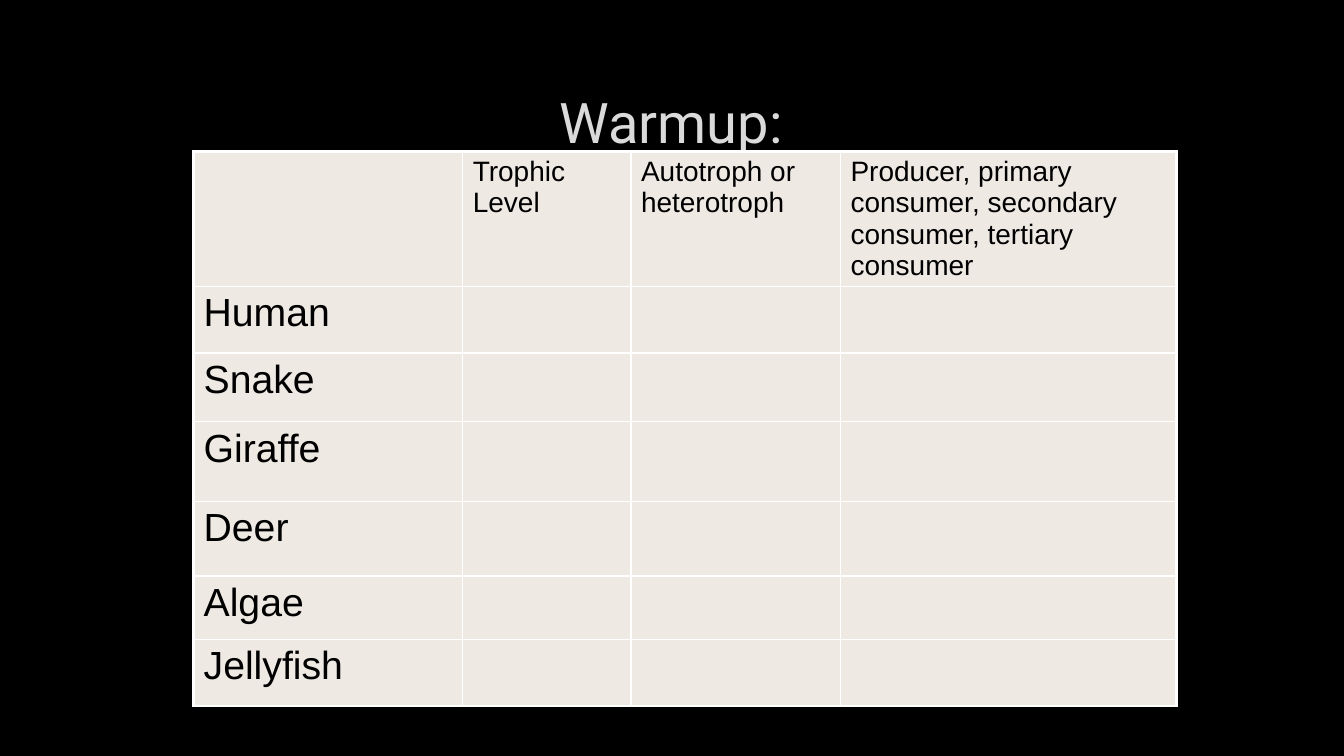
from dataclasses import dataclass

from lxml import etree
from pptx import Presentation
from pptx import util as u
from pptx.dml.color import RGBColor
from pptx.enum import text
from pptx.oxml.ns import qn


@dataclass(frozen=True)
class Theme:
    """Hold the colours, fonts and type sizes of the slide."""
    back: str = "000000"
    title: str = "DADADA"
    ink: str = "000000"
    cell: str = "EFE9E4"
    rule: str = "FFFFFF"
    head_font: str = "Roboto"
    body_font: str = "Arial"
    title_size: int = 40
    head_size: int = 20
    row_size: int = 28
    thin: float = 1
    thick: float = 2.25


THEME = Theme()
HEADS = ["", "Trophic Level", "Autotroph or heterotroph",
         "Producer, primary consumer, secondary consumer, tertiary consumer"]
NAMES = ["Human", "Snake", "Giraffe", "Deer", "Algae", "Jellyfish"]
WIDTHS = [6.78, 4.24, 5.28, 8.46]
HEIGHTS = [3.38, 1.68, 1.73, 2.01, 1.88, 1.6, 1.68]


def write(frame, words, font, size, color, align=text.PP_ALIGN.LEFT):
    """Write one formatted paragraph into a text frame."""
    para = frame.paragraphs[0]
    para.alignment = align
    run = para.add_run()
    run.text = words
    run.font.name = font
    run.font.size = u.Pt(size)
    run.font.bold = False
    run.font.color.rgb = RGBColor.from_string(color)


def rule_cell(cell, sides):
    """Draw the cell borders; sides maps each side to a width in points."""
    props = cell._tc.get_or_add_tcPr()
    for side, width in sides.items():
        line = etree.SubElement(props, qn(f"a:ln{side}"), w=str(u.Pt(width)))
        fill = etree.SubElement(line, qn("a:solidFill"))
        etree.SubElement(fill, qn("a:srgbClr"), val=THEME.rule)


def add_title(slide, words, box):
    """Place the title placeholder in the box."""
    title = slide.shapes.title
    title.left, title.top, title.width, title.height = map(u.Cm, box)
    frame = title.text_frame
    frame.word_wrap = True
    frame.auto_size = text.MSO_AUTO_SIZE.NONE
    frame.vertical_anchor = text.MSO_ANCHOR.MIDDLE
    write(frame, words, font=THEME.head_font, size=THEME.title_size,
          color=THEME.title, align=text.PP_ALIGN.CENTER)


def add_grid(slide, left, top):
    """Place the organism table with its corner at left, top."""
    rows = [HEADS] + [[name, "", "", ""] for name in NAMES]
    grid = slide.shapes.add_table(
        len(rows), len(HEADS), u.Cm(left), u.Cm(top),
        u.Cm(sum(WIDTHS)), u.Cm(sum(HEIGHTS))).table
    grid.first_row = grid.horz_banding = False
    for col, width in zip(grid.columns, WIDTHS):
        col.width = u.Cm(width)
    for row, height in zip(grid.rows, HEIGHTS):
        row.height = u.Cm(height)
    for r, row in enumerate(rows):
        for c, words in enumerate(row):
            cell = grid.cell(r, c)
            edges = {"L": c == 0, "R": c == len(row) - 1,
                     "T": r == 0, "B": r == len(rows) - 1}
            rule_cell(cell, {side: THEME.thick if edge else THEME.thin
                             for side, edge in edges.items()})
            cell.fill.solid()
            cell.fill.fore_color.rgb = RGBColor.from_string(THEME.cell)
            if words:
                write(cell.text_frame, words, font=THEME.body_font,
                      size=THEME.row_size if r else THEME.head_size,
                      color=THEME.ink)


def main():
    """Build the slide and save it."""
    deck = Presentation()
    deck.slide_width, deck.slide_height = u.Cm(33.87), u.Cm(19.05)
    slide = deck.slides.add_slide(deck.slide_layouts.get_by_name("Title Only"))
    fill = slide.background.fill
    fill.solid()
    fill.fore_color.rgb = RGBColor.from_string(THEME.back)
    add_title(slide, "Warmup:", (2.54, 1.7, 28.75, 2.69))
    add_grid(slide, 4.88, 3.81)
    deck.save("out.pptx")


if __name__ == "__main__":
    main()
